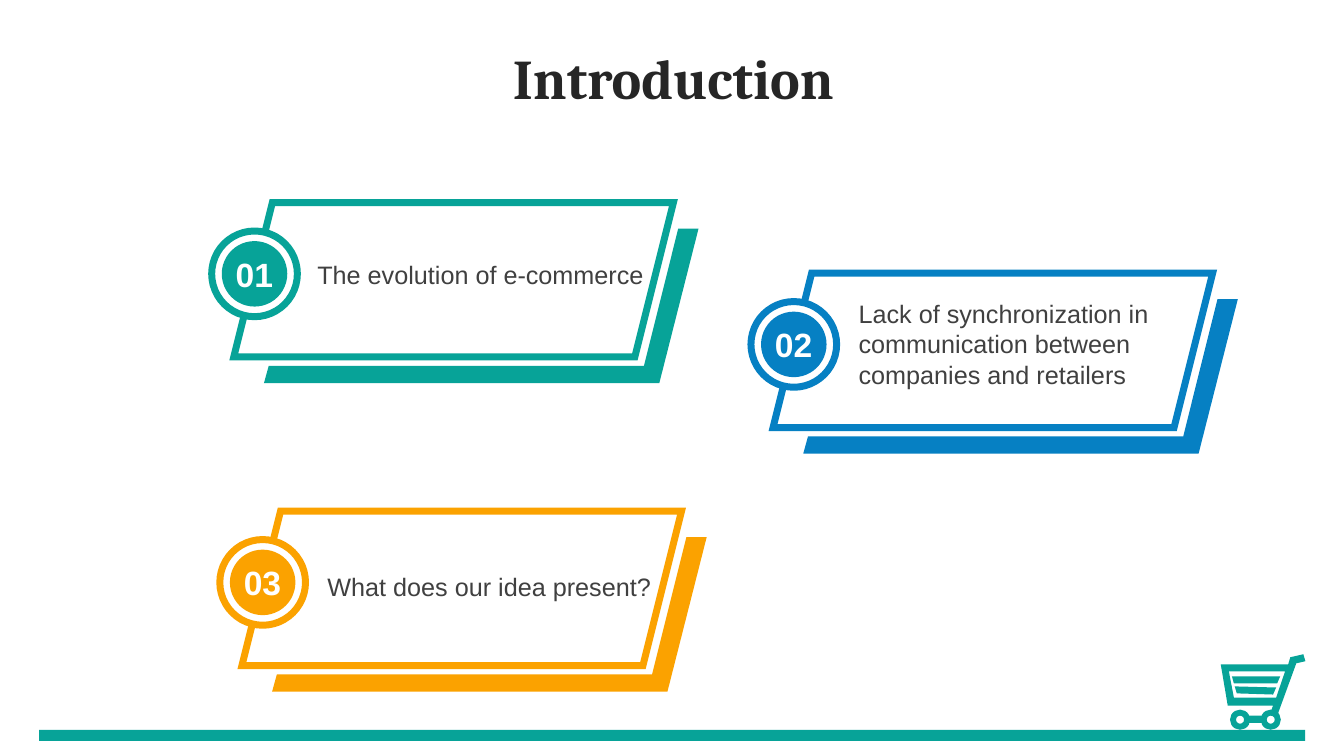
from lxml.etree import SubElement
from pptx import Presentation
from pptx.dml.color import RGBColor
from pptx.enum.shapes import MSO_SHAPE
from pptx.enum.text import MSO_ANCHOR, PP_ALIGN
from pptx.oxml.ns import qn
from pptx.util import Pt

TEAL = RGBColor(0x07, 0xA3, 0x98)
BLUE = RGBColor(0x06, 0x80, 0xC3)
ORANGE = RGBColor(0xFB, 0xA2, 0x00)
WHITE = RGBColor(0xFF, 0xFF, 0xFF)
INK = RGBColor(0x26, 0x26, 0x26)
GRAY = RGBColor(0x40, 0x40, 0x40)

presentation = Presentation()
presentation.slide_width, presentation.slide_height = Pt(960), Pt(540)
slide = presentation.slides.add_slide(presentation.slide_layouts[6])


def paint(shape, fill, line=None):
    shape.shadow.inherit = False
    shape.fill.solid()
    shape.fill.fore_color.rgb = fill
    if line is None:
        shape.line.fill.background()
    else:
        shape.line.color.rgb = line
        shape.line.width = Pt(5)
        SubElement(shape.line._get_or_add_ln(), qn("a:miter"), lim="800000")


def add_text(text, left, top, width, height, size=18, color=GRAY, font="Arial",
             bold=False, align=PP_ALIGN.LEFT, anchor=MSO_ANCHOR.TOP, inset=7.2):
    box = slide.shapes.add_textbox(Pt(left), Pt(top), Pt(width), Pt(height))
    frame = box.text_frame
    frame.word_wrap = True
    frame.vertical_anchor = anchor
    frame.margin_left = frame.margin_right = Pt(inset)
    paragraph = frame.paragraphs[0]
    paragraph.alignment = align
    run = paragraph.add_run()
    run.text = text
    run.font.size = Pt(size)
    run.font.name = font
    run.font.bold = bold
    run.font.color.rgb = color


# Cart: outline, window, two bars and axle as contours of one shape
cart_left, cart_top = 872, 467.3
cart_contours = [
    [(59, 0), (49.7, 2.2), (48.2, 7.2), (0, 7.2), (5, 36.7), (37.4, 36.7),
     (35, 43), (40.5, 43.5), (54, 6.5), (60.5, 5)],
    [(46, 12.2), (39.6, 31), (9.4, 31), (5.8, 12.2)],
    [(10, 23), (11.5, 28), (37.4, 28.8), (39.6, 23.8)],
    [(8, 15.8), (9.4, 20.9), (40.3, 20.9), (42.5, 15.8)],
    [(20, 43.9), (29.5, 43.9), (29.5, 49), (20, 49)],
]
builder = slide.shapes.build_freeform(*map(Pt, cart_contours[0][0]))
for number, contour in enumerate(cart_contours):
    points = [(Pt(x), Pt(y)) for x, y in contour]
    if number:
        builder.move_to(*points[0])
    builder.add_line_segments(points[1:], close=True)
paint(builder.convert_to_shape(Pt(cart_left), Pt(cart_top)), TEAL)

for wheel_left in (6.6, 28.5):
    wheel = slide.shapes.add_shape(MSO_SHAPE.DONUT, Pt(cart_left + wheel_left),
                                   Pt(506.9), Pt(14.4), Pt(14.4))
    wheel.adjustments[0] = 0.3
    paint(wheel, TEAL)

# Floor bar and title
floor = slide.shapes.add_shape(MSO_SHAPE.RECTANGLE, Pt(28), Pt(521.3), Pt(904.3), Pt(8))
paint(floor, TEAL)
add_text("Introduction", 25.2, 26.6, 911.5, 56.9, size=40, color=INK, font="Cambria",
         bold=True, align=PP_ALIGN.CENTER, anchor=MSO_ANCHOR.MIDDLE)

# Cards: number, colour, left, top, then text with its offset, width and height
cards = [
    ("01", TEAL, 167, 144.8, "The evolution of e-commerce", 52.6, 36.7, 253.4, 29),
    ("02", BLUE, 552.2, 195.2,
     "Lack of synchronization in communication between companies and retailers",
     54, 14.4, 243.4, 72.7),
    ("03", ORANGE, 172.8, 365.2, "What does our idea present?", 54, 39.6, 246.2, 29),
]
edge = [(317.5, 18.5), (332, 18.5), (304, 128.8), (21.6, 128.8), (25, 116.6), (293, 116.6)]

for number, color, left, top, text, text_left, text_top, text_width, text_height in cards:
    panel = slide.shapes.add_shape(MSO_SHAPE.PARALLELOGRAM, Pt(left), Pt(top),
                                   Pt(314), Pt(110.2))
    paint(panel, WHITE, color)

    points = [(Pt(left + x), Pt(top + y)) for x, y in edge]
    builder = slide.shapes.build_freeform(*points[0])
    builder.add_line_segments(points[1:], close=True)
    paint(builder.convert_to_shape(), color)

    add_text(text, left + text_left, top + text_top, text_width, text_height)

    for offset, diameter, fill, line in ((0, 61.2, WHITE, color), (7.2, 46.8, color, None)):
        disc = slide.shapes.add_shape(MSO_SHAPE.OVAL, Pt(left - 15.8 + offset),
                                      Pt(top + 20.2 + offset), Pt(diameter), Pt(diameter))
        paint(disc, fill, line)
    add_text(number, left - 8, top + 32.8, 45.4, 36, size=24, color=WHITE, bold=True,
             align=PP_ALIGN.CENTER, inset=0)

presentation.save("out.pptx")
